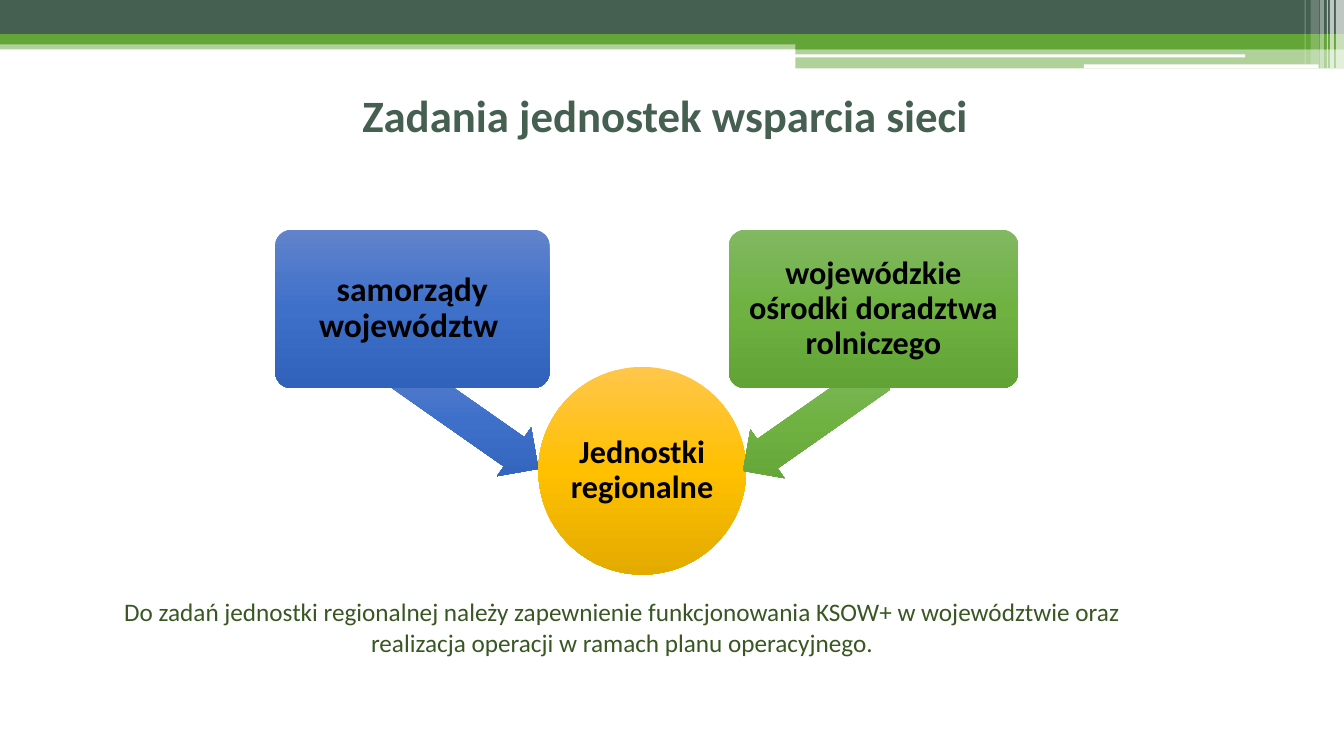
from dataclasses import dataclass

from lxml import etree
from pptx import Presentation
from pptx.dml.color import RGBColor
from pptx.enum.shapes import MSO_SHAPE
from pptx.enum.text import MSO_ANCHOR, PP_ALIGN
from pptx.oxml.ns import qn
from pptx.util import Inches, Pt

RECT, ROUNDED, OVAL, ARROW = (MSO_SHAPE.RECTANGLE, MSO_SHAPE.ROUNDED_RECTANGLE,
                              MSO_SHAPE.OVAL, MSO_SHAPE.LEFT_ARROW)
CENTER = PP_ALIGN.CENTER
TOP, MIDDLE = MSO_ANCHOR.TOP, MSO_ANCHOR.MIDDLE


@dataclass(frozen=True)
class Theme:
    font: str = "Calibri"
    dark: str = "455F51"
    green: str = "63A537"
    white: str = "FFFFFF"
    black: str = "000000"
    body: str = "385723"
    blue_blend: tuple = ("6183CB", "3E70CA", "3062BB")
    green_blend: tuple = ("81B861", "6FB242", "62A336")
    gold_blend: tuple = ("FFC64B", "FFC000", "E3AB00")
    title_size: int = 32
    large_label: int = 24
    label_size: int = 23
    body_size: int = 18


THEME = Theme()

# left, top, width, height, colour, opacity in percent
BANDS = [
    (0, 0.4, 13.33, 0.09, THEME.green, 50),
    (0, 0, 13.33, 0.34, THEME.dark, 100),
    (0, 0.34, 13.33, 0.1, THEME.green, 100),
    (7.89, 0.39, 5.44, 0.1, THEME.green, 100),
    (7.89, 0.48, 5.44, 0.2, THEME.green, 50),
    (7.88, 0.54, 4.47, 0.03, THEME.white, 100),
    (10.75, 0.64, 2.33, 0.04, THEME.white, 100),
]

# left, width, height, opacity in percent
STRIPES = [
    (13.25, 0.08, 0.68, 65),
    (13.19, 0.04, 0.68, 65),
    (13.16, 0.01, 0.68, 60),
    (13.09, 0.04, 0.68, 40),
    (13, 0.08, 0.64, 20),
    (12.94, 0.01, 0.64, 30),
]


def add_plain_shape(slide, kind, left, top, width, height):
    sp = slide.shapes.add_shape(kind, Inches(left), Inches(top),
                                Inches(width), Inches(height))
    sp.shadow.inherit = False
    sp.line.fill.background()
    return sp


def add_band(slide, left, top, width, height, color, opacity):
    sp = add_plain_shape(slide, RECT, left, top, width, height)
    sp.fill.solid()
    sp.fill.fore_color.rgb = RGBColor.from_string(color)
    if opacity < 100:
        clr = sp.fill._xPr.find(qn("a:solidFill"))[0]
        etree.SubElement(clr, qn("a:alpha"), val=str(opacity * 1000))


def blend_down(sp, colors):
    """Fill with evenly spaced colours from top to bottom, whatever the rotation."""
    sp.fill.gradient()
    grad = sp.fill._xPr.find(qn("a:gradFill"))
    grad.set("rotWithShape", "0")
    for child in list(grad):
        grad.remove(child)
    stops = etree.SubElement(grad, qn("a:gsLst"))
    for i, color in enumerate(colors):
        stop = etree.SubElement(stops, qn("a:gs"),
                                pos=str(100000 * i // (len(colors) - 1)))
        etree.SubElement(stop, qn("a:srgbClr"), val=color)
    etree.SubElement(grad, qn("a:lin"), ang="5400000", scaled="0")


def write_text(sp, text, size, color, bold=False, anchor=MIDDLE, inset=0.05, spacing=1.0):
    tf = sp.text_frame
    tf.word_wrap = True
    tf.vertical_anchor = anchor
    tf.margin_left = tf.margin_right = tf.margin_top = tf.margin_bottom = Inches(inset)
    p = tf.paragraphs[0]
    p.text = text
    p.alignment = CENTER
    p.line_spacing = spacing
    p.font.name = THEME.font
    p.font.size = Pt(size)
    p.font.bold = bold
    p.font.color.rgb = RGBColor.from_string(color)


def add_text(slide, left, top, width, height, text, size, color, **style):
    sp = slide.shapes.add_textbox(Inches(left), Inches(top), Inches(width), Inches(height))
    write_text(sp, text, size, color, **style)


def add_node(slide, kind, left, top, width, height, colors, text, size, inset=0.05):
    sp = add_plain_shape(slide, kind, left, top, width, height)
    if kind == ROUNDED:
        sp.adjustments[0] = 0.1
    blend_down(sp, colors)
    write_text(sp, text, size, THEME.black, bold=True, inset=inset, spacing=0.9)


def add_block_arrow(slide, left, top, rotation, colors):
    sp = add_plain_shape(slide, ARROW, left, top, 1.66, 0.59)
    sp.adjustments[0] = 0.6
    sp.adjustments[1] = 0.5
    sp.rotation = rotation
    blend_down(sp, colors)


def main():
    prs = Presentation()
    prs.slide_width, prs.slide_height = Inches(13.33), Inches(7.5)
    slide = prs.slides.add_slide(prs.slide_layouts[6])

    for band in BANDS:
        add_band(slide, *band)
    for left, width, height, opacity in STRIPES:
        add_band(slide, left, 0, width, height, THEME.white, opacity)

    add_text(slide, 0.6, 0.55, 12, 1.17, "Zadania jednostek wsparcia sieci",
             THEME.title_size, THEME.dark, bold=True)
    add_text(slide, 0.79, 5.87, 10.76, 1.33,
             "Do zadań jednostki regionalnej należy zapewnienie funkcjonowania KSOW+ "
             "w województwie oraz realizacja operacji w ramach planu operacyjnego.",
             THEME.body_size, THEME.body, anchor=TOP)

    add_node(slide, OVAL, 5.34, 3.64, 2.06, 2.06, THEME.gold_blend,
             "Jednostki regionalne", THEME.label_size, inset=0.02)
    add_block_arrow(slide, 3.83, 3.88, 215, THEME.blue_blend)
    add_node(slide, ROUNDED, 2.73, 2.28, 2.72, 1.57, THEME.blue_blend,
             "samorządy województw ", THEME.large_label)
    add_block_arrow(slide, 7.22, 3.9, 325, THEME.green_blend)
    add_node(slide, ROUNDED, 7.23, 2.28, 2.87, 1.57, THEME.green_blend,
             "wojewódzkie ośrodki doradztwa rolniczego", THEME.label_size)

    prs.save("out.pptx")


if __name__ == "__main__":
    main()
